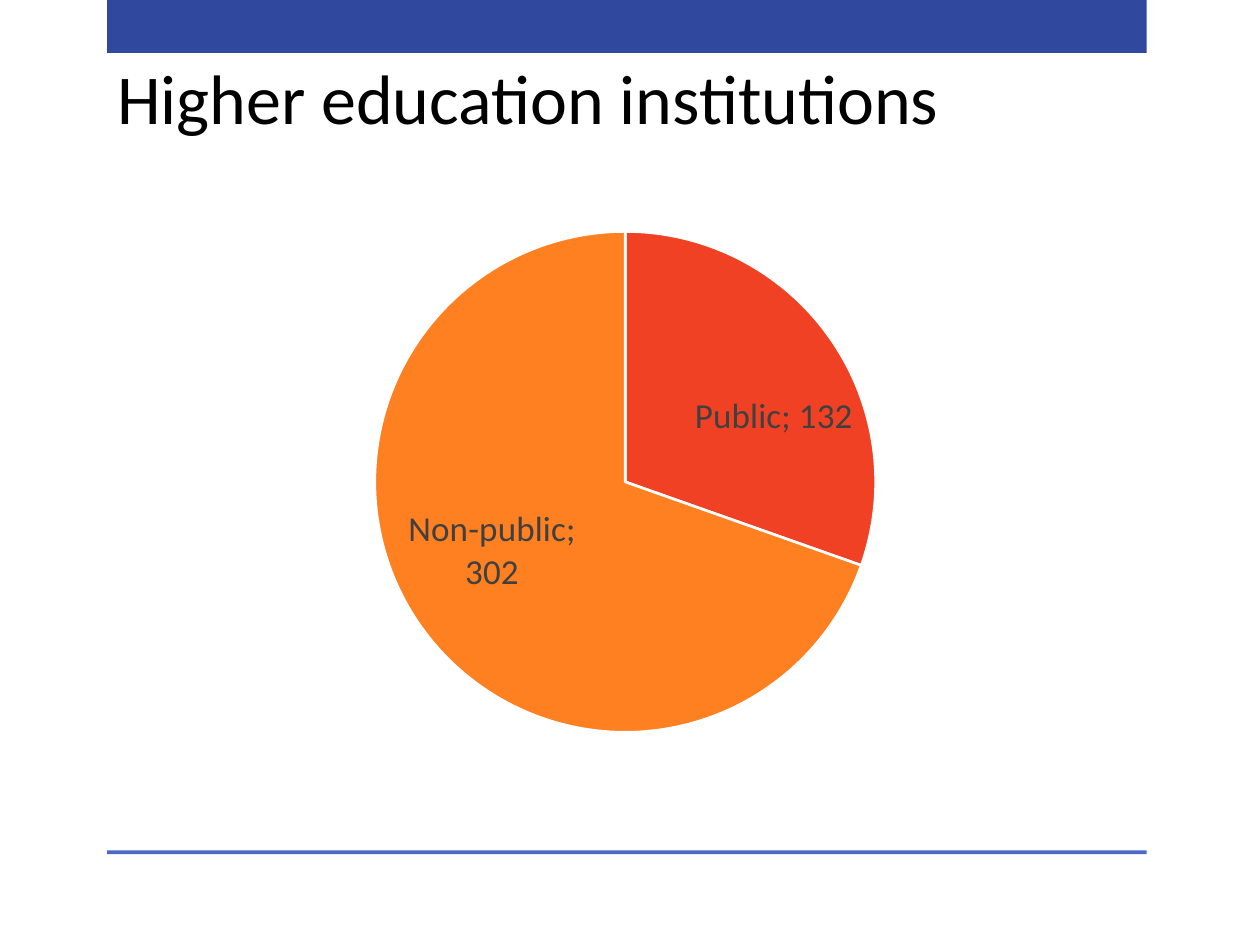
from lxml import etree
from pptx import Presentation
from pptx.chart.data import CategoryChartData as Data
from pptx.dml.color import RGBColor as RGB
from pptx.enum.chart import XL_CHART_TYPE as Kind, XL_LABEL_POSITION as Spot
from pptx.enum.shapes import MSO_SHAPE as Shape
from pptx.enum.text import MSO_ANCHOR as Anchor, PP_ALIGN as Align
from pptx.oxml import parse_xml
from pptx.oxml.ns import nsdecls, qn
from pptx.util import Inches, Pt

NAVY = RGB(0x31, 0x48, 0x9F)
BLUE = RGB(0x4E, 0x67, 0xC8)
RED = RGB(0xF1, 0x41, 0x24)
ORANGE = RGB(0xFF, 0x80, 0x21)
GREY = RGB(0x40, 0x40, 0x40)
BLACK = RGB(0, 0, 0)
WHITE = RGB(0xFF, 0xFF, 0xFF)
FONT = "Calibri"

deck = Presentation()
deck.slide_width, deck.slide_height = Inches(10), Inches(7.5)
slide = deck.slides.add_slide(deck.slide_layouts[5])

for top, height, color in ((0, 0.42, NAVY), (6.75, 0.03, BLUE)):
    band = slide.shapes.add_shape(
        Shape.RECTANGLE, Inches(0.85), Inches(top), Inches(8.25), Inches(height))
    band.shadow.inherit = False
    band.fill.solid()
    band.fill.fore_color.rgb = color
    band.line.fill.background()

title = slide.shapes.title
title.left, title.top = Inches(0.83), Inches(0.13)
title.width, title.height = Inches(7.42), Inches(1.02)
frame = title.text_frame
frame.word_wrap = True
frame.vertical_anchor = Anchor.BOTTOM
para = frame.paragraphs[0]
para.alignment = Align.LEFT
run = para.add_run()
run.text = "Higher education institutions"
run.font.name, run.font.size = FONT, Pt(40)
run.font.color.rgb = BLACK

data = Data()
data.categories = ["Public", "Non-public"]
data.add_series("Series 1", (132, 302))
chart = slide.shapes.add_chart(
    Kind.PIE, Inches(0.67), Inches(1.7), Inches(8.5), Inches(4.57), data).chart
chart.has_title = False
chart.has_legend = False
chart.font.name, chart.font.size = FONT, Pt(10)
chart.font.color.rgb = BLACK

pie = chart.plots[0]
pie.vary_by_categories = True
series = pie.series[0]
for index, color in enumerate((RED, ORANGE)):
    style = series.points[index].format
    style.fill.solid()
    style.fill.fore_color.rgb = color
    style.line.color.rgb = WHITE
    style.line.width = Pt(1.5)

labels = series.data_labels
labels.show_value = True
labels.show_category_name = True
labels.show_percentage = False
labels.position = Spot.BEST_FIT
labels.font.name, labels.font.size = FONT, Pt(20)
labels.font.color.rgb = GREY

root = chart.element
mark = etree.Element(qn("c:separator"))
mark.text = "; "
root.find(".//" + qn("c:ser")).find(
    qn("c:dLbls")).find(qn("c:showPercent")).getparent().find(
    qn("c:showBubbleSize")).addnext(mark) if root.find(
    ".//" + qn("c:showBubbleSize")) is not None else root.find(
    ".//" + qn("c:showPercent")).addnext(mark)

area = root.find(".//" + qn("c:plotArea"))
for old in area.findall(qn("c:layout")):
    area.remove(old)
sizes = (("x", 0.27), ("y", 0.03), ("w", 0.47), ("h", 0.87))
inner = "".join(f'<c:{name} val="{value}"/>' for name, value in sizes)
area.insert(0, parse_xml(
    f'<c:layout {nsdecls("c")}><c:manualLayout><c:layoutTarget val="inner"/>'
    f'<c:xMode val="edge"/><c:yMode val="edge"/>{inner}</c:manualLayout></c:layout>'))

deck.save("out.pptx")
